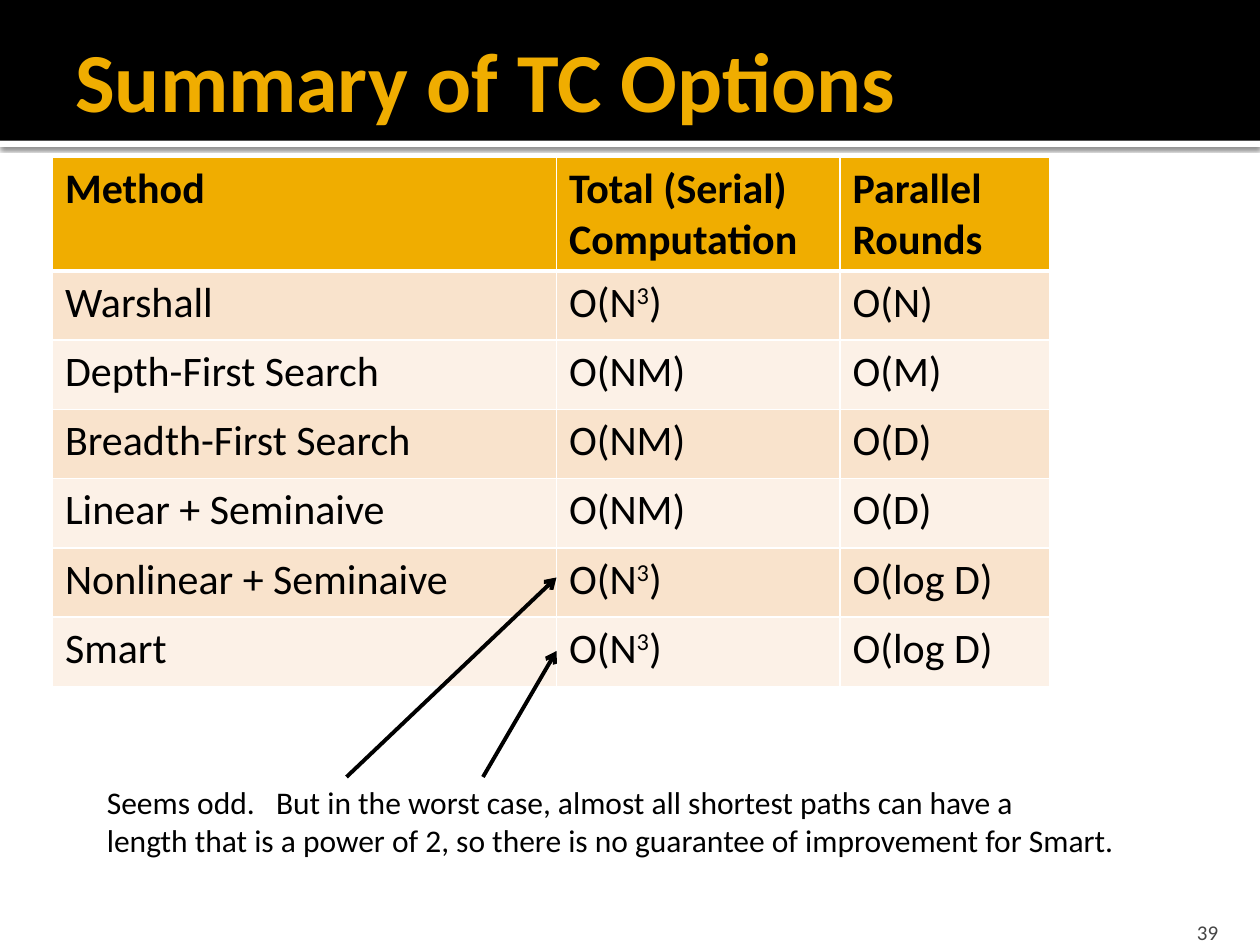
from lxml import etree
from pptx import Presentation
from pptx import util as u
from pptx.dml.color import RGBColor
from pptx.enum import shapes, text
from pptx.oxml import parse_xml
from pptx.oxml.ns import nsdecls, qn

BLACK, WHITE, GOLD, GREY = "000000", "FFFFFF", "F0AD00", "454545"
BANDS = ["F9E3CC", "FCF1E7"]
ROWS = [
    ["Method", "Total (Serial) Computation", "Parallel Rounds"],
    ["Warshall", "O(N^3^)", "O(N)"],
    ["Depth-First Search", "O(NM)", "O(M)"],
    ["Breadth-First Search", "O(NM)", "O(D)"],
    ["Linear + Seminaive", "O(NM)", "O(D)"],
    ["Nonlinear + Seminaive", "O(N^3^)", "O(log D)"],
    ["Smart", "O(N^3^)", "O(log D)"],
]
REMARK = [
    "Seems odd.   But in the worst case, almost all shortest paths can have a",
    "length that is a power of 2, so there is no guarantee of improvement for Smart.",
]


def color(value):
    return RGBColor.from_string(value)


def grid(*cells):
    return [u.Inches(cell / 12) for cell in cells]


class SlideBuilder:
    font = "Calibri"

    def __init__(self, deck):
        self.page = deck.slides.add_slide(deck.slide_layouts[6])

    def style(self, frame, size, ink, bold=False):
        for para in frame.paragraphs:
            for span in para.runs:
                span.font.name = self.font
                span.font.size = u.Pt(size)
                span.font.bold = bold
                span.font.color.rgb = color(ink)

    def bar(self, place, fill, shadow=False):
        bar = self.page.shapes.add_shape(shapes.MSO_SHAPE.RECTANGLE, *grid(*place))
        bar.shadow.inherit = False
        bar.fill.solid()
        bar.fill.fore_color.rgb = color(fill)
        bar.line.fill.background()
        if shadow:
            effects = bar._element.spPr.find(qn("a:effectLst"))
            effects.append(parse_xml(
                f'<a:outerShdw {nsdecls("a")} blurRad="{u.Pt(2.5)}" dist="{u.Pt(0.8)}" dir="5400000">'
                f'<a:srgbClr val="{BLACK}"><a:alpha val="60000"/></a:srgbClr></a:outerShdw>'))

    def label(self, place, words, size, ink, bold=False, wrap=True,
              anchor=text.MSO_ANCHOR.TOP, align=text.PP_ALIGN.LEFT):
        box = self.page.shapes.add_textbox(*grid(*place))
        frame = box.text_frame
        frame.text = words
        frame.word_wrap = wrap
        frame.vertical_anchor = anchor
        for para in frame.paragraphs:
            para.alignment = align
        self.style(frame, size, ink, bold)
        return frame

    def border(self, cell, is_header):
        properties = cell._tc.get_or_add_tcPr()
        for order, side in enumerate("LRTB"):
            width = u.Pt(3 if is_header and side == "B" else 1)
            properties.insert(order, parse_xml(
                f'<a:ln{side} {nsdecls("a")} w="{width}"><a:solidFill>'
                f'<a:srgbClr val="{WHITE}"/></a:solidFill></a:ln{side}>'))

    def table(self, place, rows, widths, heights):
        table = self.page.shapes.add_table(len(rows), len(widths), *grid(*place)).table
        for column, width in zip(table.columns, grid(*widths)):
            column.width = width
        for line, height in zip(table.rows, grid(*heights)):
            line.height = height
        for r, row in enumerate(rows):
            is_header = r == 0
            for c, words in enumerate(row):
                cell = table.cell(r, c)
                cell.fill.solid()
                cell.fill.fore_color.rgb = color(GOLD if is_header else BANDS[(r - 1) % 2])
                self.border(cell, is_header)
                for part, piece in enumerate(words.split("^")):
                    span = cell.text_frame.paragraphs[0].add_run()
                    span.text = piece
                    if part % 2:
                        span._r.get_or_add_rPr().set("baseline", "30000")
                self.style(cell.text_frame, 24, BLACK, is_header)

    def arrow(self, start, end):
        arrow = self.page.shapes.add_connector(
            shapes.MSO_CONNECTOR.STRAIGHT, *grid(*start, *end))
        arrow.line.color.rgb = color(BLACK)
        arrow.line.width = u.Pt(2.25)
        etree.SubElement(arrow.line._get_or_add_ln(), qn("a:tailEnd"), type="arrow")
        etree.SubElement(arrow._element.spPr, qn("a:effectLst"))


def main():
    deck = Presentation()
    deck.slide_width, deck.slide_height = grid(120, 90)
    slide = SlideBuilder(deck)

    slide.bar((0, 13.4, 120, 0.6), WHITE, shadow=True)
    slide.bar((0, 0, 120, 13.4), BLACK)
    title = slide.label((6, 2, 114, 11), "Summary of TC Options", 48, GOLD, bold=True,
                        anchor=text.MSO_ANCHOR.MIDDLE)
    title.margin_right = u.Inches(0.05)
    number = slide.label((107.6, 86.4, 9.6, 3.6), "39", 12, GREY,
                         anchor=text.MSO_ANCHOR.BOTTOM, align=text.PP_ALIGN.RIGHT)
    number.margin_bottom = 0

    slide.table((5, 15, 95, 50.5), ROWS, [48, 27, 20], [10.2] + [6.6] * 6)
    remark = slide.label((9, 74, 99.5, 8.5), "\n".join(REMARK), 18, BLACK, wrap=False)
    remark.auto_size = text.MSO_AUTO_SIZE.SHAPE_TO_FIT_TEXT
    slide.arrow((33, 74), (53, 55))
    slide.arrow((46, 74), (53, 62))

    deck.save("out.pptx")


if __name__ == "__main__":
    main()
